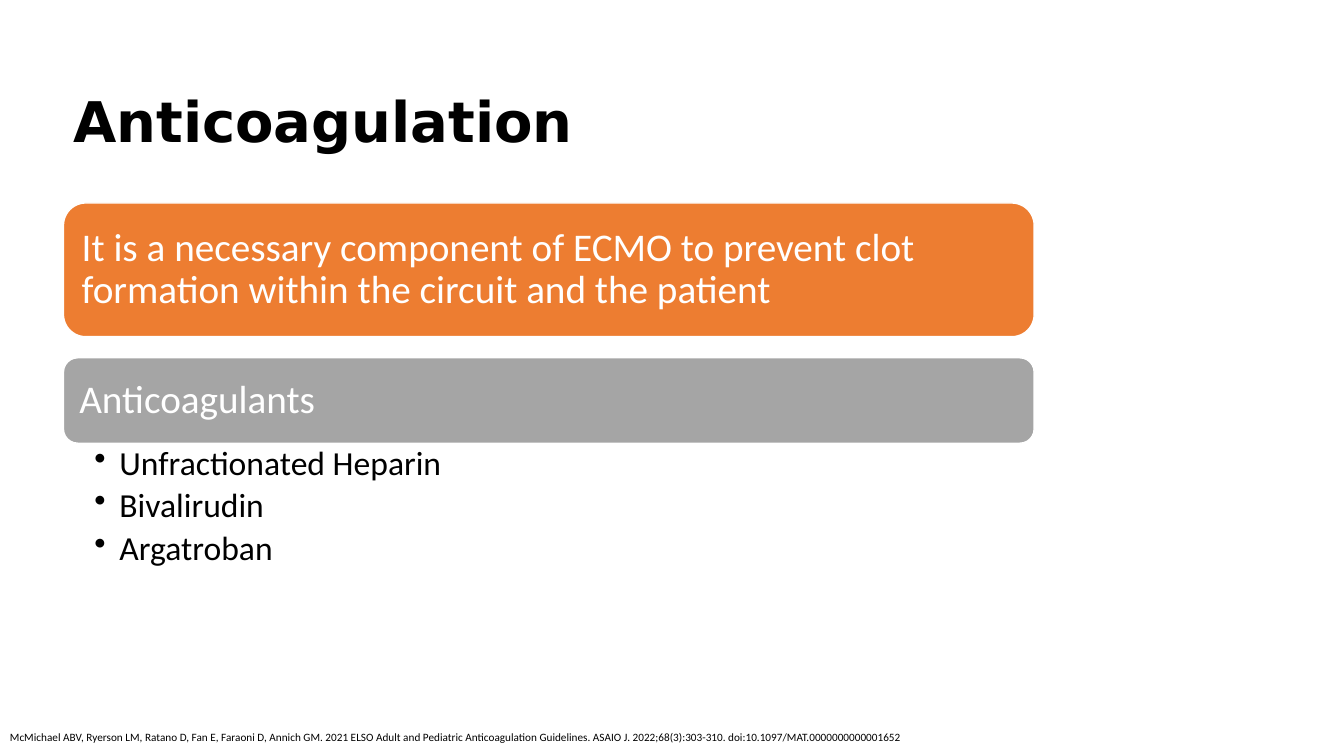
import pptx
import pptx.dml.color
import pptx.enum.shapes
import pptx.enum.text
import pptx.oxml.ns
import pptx.util
from lxml import etree

Pt = pptx.util.Pt
ANCHOR = pptx.enum.text.MSO_ANCHOR
LEFT, WIDTH = 45.36, 693.36
WHITE, BLACK, ORANGE, GRAY = "FFFFFF", "000000", "ED7D31", "A5A5A5"
CITATION = (
    "McMichael ABV, Ryerson LM, Ratano D, Fan E, Faraoni D, Annich GM. "
    "2021 ELSO Adult and Pediatric Anticoagulation Guidelines. "
    "ASAIO J. 2022;68(3):303-310. doi:10.1097/MAT.0000000000001652"
)


def color(hex_value):
    return pptx.dml.color.RGBColor.from_string(hex_value)


def set_frame(frame, anchor, insets):
    frame.word_wrap = True
    frame.vertical_anchor = anchor
    left, top, right, bottom = insets
    frame.margin_left, frame.margin_top = Pt(left), Pt(top)
    frame.margin_right, frame.margin_bottom = Pt(right), Pt(bottom)


def style(paragraph, size, hex_value, font="Calibri", bold=False, spacing=0.9):
    paragraph.alignment = pptx.enum.text.PP_ALIGN.LEFT
    paragraph.line_spacing = spacing
    for run in paragraph.runs:
        run.font.name = font
        run.font.size = Pt(size)
        run.font.bold = bold
        run.font.color.rgb = color(hex_value)


def add_line(slide, box, text, anchor, **look):
    line = slide.shapes.add_textbox(*map(Pt, box))
    set_frame(line.text_frame, anchor, (7.2, 3.6, 7.2, 3.6))
    line.text_frame.text = text
    style(line.text_frame.paragraphs[0], **look)


def add_banner(slide, box, text, fill):
    banner = slide.shapes.add_shape(
        pptx.enum.shapes.MSO_SHAPE.ROUNDED_RECTANGLE, *map(Pt, box))
    banner.shadow.inherit = False
    banner.fill.solid()
    banner.fill.fore_color.rgb = color(fill)
    banner.line.color.rgb = color(WHITE)
    banner.line.width = Pt(1)
    set_frame(banner.text_frame, ANCHOR.MIDDLE, (8.4,) * 4)
    banner.text_frame.text = text
    style(banner.text_frame.paragraphs[0], 28, WHITE)


def add_bullets(slide, box, items):
    bullets = slide.shapes.add_textbox(*map(Pt, box))
    set_frame(bullets.text_frame, ANCHOR.TOP, (22, 2.2, 13.7, 2.2))
    bullets.text_frame.text = "\n".join(items)
    for paragraph in bullets.text_frame.paragraphs:
        properties = paragraph._p.get_or_add_pPr()
        properties.set("marL", str(Pt(18)))
        properties.set("indent", str(-Pt(18)))
        mark = etree.SubElement(properties, pptx.oxml.ns.qn("a:buChar"))
        mark.set("char", "•")
        paragraph.space_after = Pt(4.4)
        style(paragraph, 24, BLACK)


def build():
    deck = pptx.Presentation()
    deck.slide_width, deck.slide_height = Pt(960), Pt(540)
    slide = deck.slides.add_slide(deck.slide_layouts[6])
    add_line(slide, (LEFT, 63.4, 510.5, 51), "Anticoagulation", ANCHOR.MIDDLE,
             size=40, hex_value=BLACK, font="DejaVu Sans", bold=True)
    add_banner(slide, (LEFT, 145, WIDTH, 95.5),
               "It is a necessary component of ECMO to prevent clot "
               "formation within the circuit and the patient", ORANGE)
    add_banner(slide, (LEFT, 255.6, WIDTH, 61), "Anticoagulants", GRAY)
    add_bullets(slide, (LEFT, 316.6, WIDTH, 98),
                ["Unfractionated Heparin", "Bivalirudin", "Argatroban"])
    add_line(slide, (0, 518.4, 865.4, 17), CITATION, ANCHOR.TOP,
             size=8, hex_value=BLACK, spacing=1.0)
    deck.save("out.pptx")


if __name__ == "__main__":
    build()
